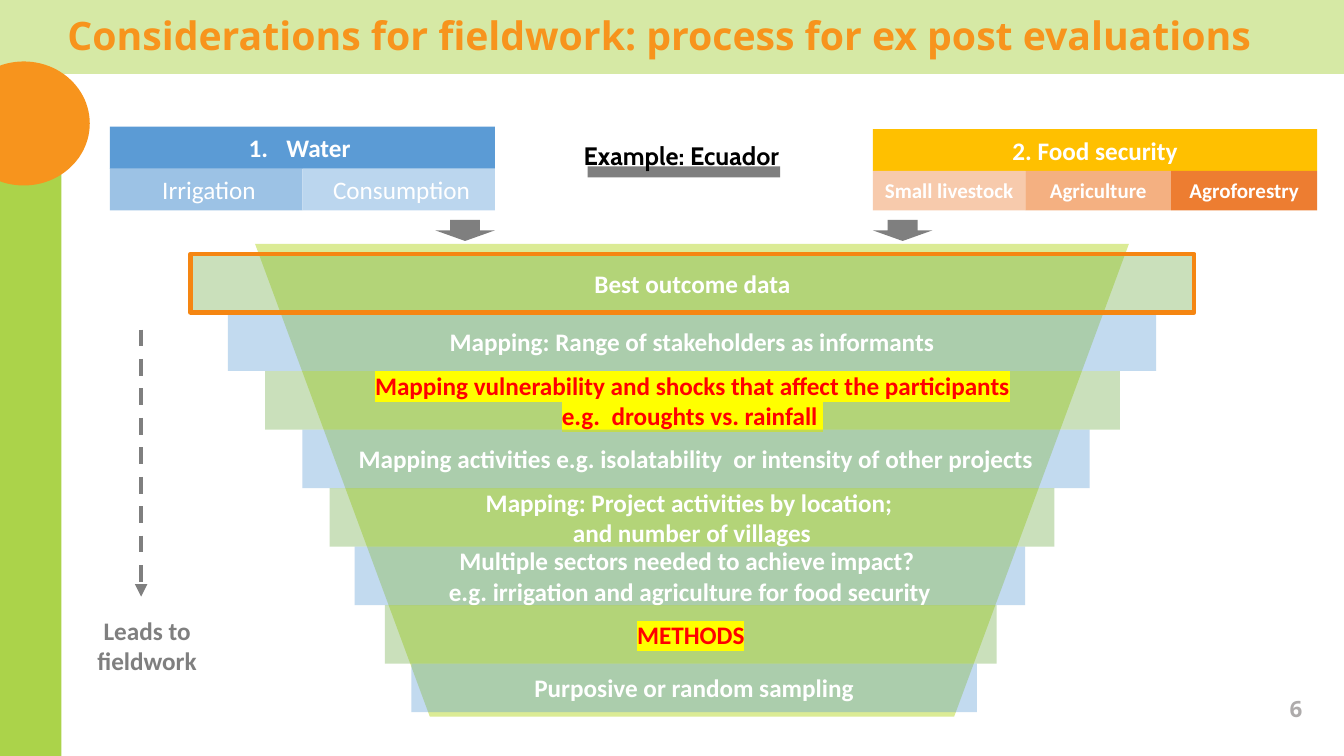
from lxml import etree
from pptx import Presentation, util as u
from pptx.dml.color import RGBColor
from pptx.enum import dml, shapes, text
from pptx.oxml import ns

Pt = u.Pt
G = shapes.MSO_SHAPE
MID = text.MSO_ANCHOR.MIDDLE
TOP = text.MSO_ANCHOR.TOP
MAIN, RIGHT = text.PP_ALIGN.CENTER, text.PP_ALIGN.RIGHT

THEME = {
    "lime": "ABD34A", "band": "D6E9A5", "orange": "F7941D", "frame": "F58612",
    "funnel": "DBEB95", "green": "70AD47", "blue": "5B9BD5", "irrig": "9CC2E5",
    "drink": "BBD6EE", "gold": "FFC000", "peach": "F7CAAC", "apric": "F4B081",
    "rust": "ED7D31", "grey": "7F7F7F", "pale": "AEABAB", "white": "FFFFFF",
    "black": "000000", "red": "FF0000", "mark": "FFFF00",
    "title": 28, "body": 18, "page": 16, "small": 15,
}


def write(shape, words, color="white", size="body", face="Calibri", bold=True,
          mark=None, align=MAIN, anchor=MID):
    frame = shape.text_frame
    form = {"word_wrap": True, "vertical_anchor": anchor,
            "auto_size": text.MSO_AUTO_SIZE.NONE,
            "margin_left": Pt(7.2), "margin_right": Pt(7.2),
            "margin_top": Pt(3.6), "margin_bottom": Pt(3.6)}
    for key, val in form.items():
        setattr(frame, key, val)
    frame.text = words
    for para in frame.paragraphs:
        para.alignment = align
        run = para.runs[0]
        for key, val in {"name": face, "size": Pt(THEME[size]), "bold": bold}.items():
            setattr(run.font, key, val)
        run.font.color.rgb = RGBColor.from_string(THEME[color])
        if mark:
            light = etree.Element(ns.qn("a:highlight"))
            etree.SubElement(light, ns.qn("a:srgbClr"), val=THEME[mark])
            run.font.fill  # fill sits before the highlight
            run.font.color.rgb = RGBColor.from_string(THEME[color])
            run.element if hasattr(run, "element") else None
            para.runs[0].font.color
            shape.element.findall(".//" + ns.qn("a:rPr"))[
                len(shape.element.findall(".//" + ns.qn("a:highlight")))
            ].find(ns.qn("a:solidFill")).addnext(light)


def box(kind, left, top, wide, high, fill=None, alpha=None):
    shape = sheet.add_shape(kind, Pt(left), Pt(top), Pt(wide), Pt(high))
    shape.shadow.inherit = False
    shape.line.fill.background()
    if fill is None:
        shape.fill.background()
        return shape
    shape.fill.solid()
    shape.fill.fore_color.rgb = RGBColor.from_string(THEME[fill])
    if alpha:
        tint = shape.element.spPr.find(ns.qn("a:solidFill"))[0]
        etree.SubElement(tint, ns.qn("a:alpha"), val=str(alpha * 1000))
    return shape


deck = Presentation()
deck.slide_width, deck.slide_height = Pt(960), Pt(540)
slide = deck.slides.add_slide(deck.slide_layouts[5])
sheet = slide.shapes

# Side bar, top band and disc
box(G.RECTANGLE, 0, 0, 43.9, 540, "lime")
box(G.RECTANGLE, 0, 0, 960, 52.8, "band")
box(G.OVAL, -30.2, 43.9, 94.3, 88.6, "orange")

# Title, raised above the band
title = sheet.title
for key, val in {"left": 41, "top": 7.9, "width": 919, "height": 46}.items():
    setattr(title, key, Pt(val))
write(title, "Considerations for fieldwork: process for ex post evaluations", "orange",
      "title", "Open Sans", align=text.PP_ALIGN.LEFT, anchor=TOP)
title.text_frame.paragraphs[0].line_spacing = 0.9
title.element.getparent().append(title.element)

# Funnel
box(G.FLOWCHART_MANUAL_OPERATION, 182.2, 174.2, 624.2, 337.7, "funnel")

# Sector 1: water
water = box(G.RECTANGLE, 78.5, 90.4, 275, 30.2, "blue")
write(water, "Water ")
props = water.text_frame.paragraphs[0]
pad = water.element.find(".//" + ns.qn("a:pPr"))
pad.set("marL", str(Pt(27)))
pad.set("indent", str(-Pt(27)))
etree.SubElement(pad, ns.qn("a:buFont"), typeface="+mj-lt")
etree.SubElement(pad, ns.qn("a:buAutoNum"), type="arabicPeriod")
for i, (name, fill) in enumerate([(" Irrigation", "irrig"), (" Consumption", "drink")]):
    write(box(G.RECTANGLE, 78.5 + 137.5 * i, 120.3, 137.5, 30, fill), name, bold=False)

# Sector 2: food security
write(box(G.RECTANGLE, 623.5, 92.2, 317.4, 29.8, "gold"), "2. Food security")
left = 623.5
for name, wide, fill in [("Small livestock", 108.9, "peach"),
                         ("Agriculture", 104.2, "apric"),
                         ("Agroforestry", 104.3, "rust")]:
    write(box(G.RECTANGLE, left, 122, wide, 28.3, fill), name, size="small")
    left += wide

# Example label and arrows into the funnel
box(G.RECTANGLE, 419.8, 118.8, 137.5, 7.9, "grey")
for left in (311, 623.5):
    box(G.DOWN_ARROW, left, 157, 42.5, 15.1, "grey")
label = sheet.add_textbox(Pt(406.1), Pt(96.5), Pt(161.3), Pt(24.5))
write(label, "Example: Ecuador", "black", face="Cabin", anchor=TOP)

# Steps down the funnel
steps = [
    (136.1, 717.1, "Best outcome data"),
    (162.7, 663.1, "Mapping: Range of stakeholders as informants"),
    (189.4, 610.6, "Mapping vulnerability and shocks that affect the participants\n"
                   "e.g.  droughts vs. rainfall "),
    (216, 562.3, "Mapping activities e.g. isolatability  or intensity of other projects"),
    (235.4, 517.7, "Mapping: Project activities by location; \nand number of villages"),
    (253.4, 478.8, "Multiple sectors needed to achieve impact? \n"
                   "e.g. irrigation and agriculture for food security"),
    (275, 437, "METHODS"),
    (293.8, 403.9, "Purposive or random sampling"),
]
for i, (left, wide, words) in enumerate(steps):
    high = 34.6 if i == len(steps) - 1 else 41.8
    step = box(G.RECTANGLE, left, 181.4 + 41.8 * i, wide, high,
               ("green", "blue")[i % 2], 37)
    key = i in (2, 6)
    write(step, words, "red" if key else "white", mark="mark" if key else None)

# Frame round the first step
frame = box(G.RECTANGLE, 136.1, 181.4, 717.1, 41.8)
frame.line.color.rgb = RGBColor.from_string(THEME["frame"])
frame.line.width = Pt(3)

# Dashed arrow to fieldwork
arrow = sheet.add_connector(shapes.MSO_CONNECTOR.STRAIGHT,
                            Pt(100.8), Pt(235.4), Pt(100.8), Pt(426.2))
arrow.line.color.rgb = RGBColor.from_string(THEME["grey"])
arrow.line.width = Pt(3)
arrow.line.dash_style = dml.MSO_LINE.DASH
spot = arrow.element.spPr
etree.SubElement(spot.find(ns.qn("a:ln")), ns.qn("a:tailEnd"), type="triangle")
etree.SubElement(spot, ns.qn("a:effectLst"))
goal = sheet.add_textbox(Pt(47.5), Pt(435.6), Pt(115.2), Pt(51.1))
write(goal, "Leads to fieldwork", "grey", anchor=TOP)

# Page number
page = sheet.add_textbox(Pt(871.9), Pt(491.8), Pt(65.5), Pt(28.8))
write(page, "6", "pale", "page", "Open Sans", align=RIGHT)

deck.save("out.pptx")
